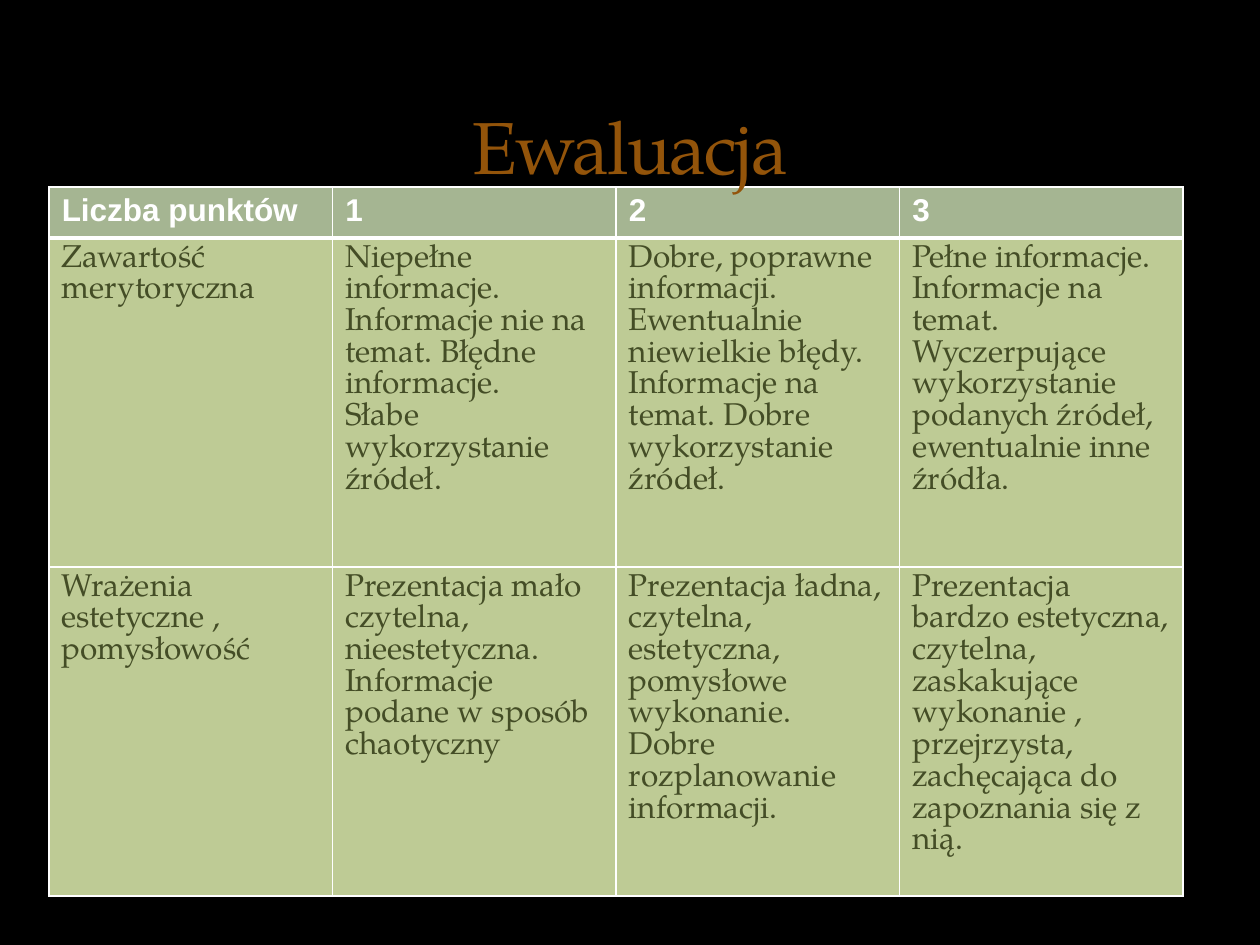
from lxml.etree import SubElement
from pptx import Presentation
from pptx.dml.color import RGBColor
from pptx.enum.text import MSO_ANCHOR, MSO_AUTO_SIZE, PP_ALIGN
from pptx.oxml.ns import qn
from pptx.util import Pt

SERIF, SANS = "TeX Gyre Pagella", "Arial"
HEADER = ["Liczba punktów", "1", "2", "3"]
# Each body cell is a list of paragraphs
CRITERIA = [
    [["Zawartość merytoryczna"],
     ["Niepełne informacje.",
      "Informacje nie na temat. Błędne informacje.",
      "Słabe wykorzystanie źródeł."],
     ["Dobre, poprawne informacji. Ewentualnie niewielkie błędy.",
      "Informacje na temat. Dobre wykorzystanie źródeł."],
     ["Pełne informacje.",
      "Informacje na temat.",
      "Wyczerpujące wykorzystanie podanych źródeł, ewentualnie inne źródła."]],
    [["Wrażenia estetyczne , pomysłowość"],
     ["Prezentacja mało czytelna, nieestetyczna.",
      "Informacje podane w sposób chaotyczny"],
     ["Prezentacja ładna, czytelna, estetyczna, pomysłowe wykonanie.",
      "Dobre rozplanowanie informacji."],
     ["Prezentacja bardzo estetyczna, czytelna, zaskakujące wykonanie , "
      "przejrzysta, zachęcająca do zapoznania się z nią."]],
]


def rgb(value):
    return RGBColor.from_string(value)


class Deck:
    def __init__(self):
        self.prs = Presentation()
        self.prs.slide_width, self.prs.slide_height = Pt(720), Pt(540)
        self.s = self.prs.slides.add_slide(self.prs.slide_layouts[5])

    def background(self, color):
        fill = self.s.background.fill
        fill.solid()
        fill.fore_color.rgb = rgb(color)

    def font(self, p, name, size, color, bold=False):
        f = p.font
        f.name, f.size, f.bold = name, Pt(size), bold
        f.color.rgb = rgb(color)

    def title(self, text, x, y, w, h):
        sp = self.s.shapes.title
        sp.left, sp.top, sp.width, sp.height = Pt(x), Pt(y), Pt(w), Pt(h)
        tf = sp.text_frame
        tf.text = text
        tf.auto_size = MSO_AUTO_SIZE.NONE
        tf.vertical_anchor = MSO_ANCHOR.BOTTOM
        tf.margin_bottom = 0
        p = tf.paragraphs[0]
        p.alignment = PP_ALIGN.CENTER
        self.font(p, SERIF, 42, "93540A")
        p.runs[0].font._element.set("spc", "-100")
        # The title lies in front of the table
        self.s.shapes._spTree.append(sp._element)

    def borders(self, cell, bottom=1, top=1):
        tc_pr = cell._tc.get_or_add_tcPr()
        widths = {"a:lnL": 1, "a:lnR": 1, "a:lnT": top, "a:lnB": bottom}
        for tag, width in widths.items():
            ln = SubElement(tc_pr, qn(tag), w=str(Pt(width)))
            fill = SubElement(ln, qn("a:solidFill"))
            SubElement(fill, qn("a:srgbClr"), val="FFFFFF")

    def cell(self, cell, lines, color, header=False, top=1):
        self.borders(cell, bottom=3 if header else 1, top=top)
        cell.fill.solid()
        cell.fill.fore_color.rgb = rgb(color)
        tf = cell.text_frame
        tf.text = "\n".join(lines)
        for p in tf.paragraphs:
            if header:
                self.font(p, SANS, 18, "FFFFFF", bold=True)
            else:
                p.line_spacing = Pt(18.1)
                self.font(p, SERIF, 18, "444D26")

    def table(self, header, rows, x, y, col_width, head_height, row_height):
        n_rows, n_cols = len(rows) + 1, len(header)
        height = head_height + row_height * len(rows)
        table = self.s.shapes.add_table(n_rows, n_cols, Pt(x), Pt(y),
                                        Pt(col_width * n_cols), Pt(height)).table
        for column in table.columns:
            column.width = Pt(col_width)
        for i, row in enumerate(table.rows):
            row.height = Pt(row_height if i else head_height)
        for j, text in enumerate(header):
            self.cell(table.cell(0, j), [text], "A5B592", header=True)
        for i, row in enumerate(rows, 1):
            for j, lines in enumerate(row):
                self.cell(table.cell(i, j), lines, "BECB95", top=3 if i == 1 else 1)


def main():
    deck = Deck()
    deck.background("000000")
    # Grading table
    deck.table(HEADER, CRITERIA, 28.1, 106.8, 162, 29.2, 188)
    # Title
    deck.title("Ewaluacja", 36, 12.25, 648, 95.75)
    deck.prs.save("out.pptx")


if __name__ == "__main__":
    main()
